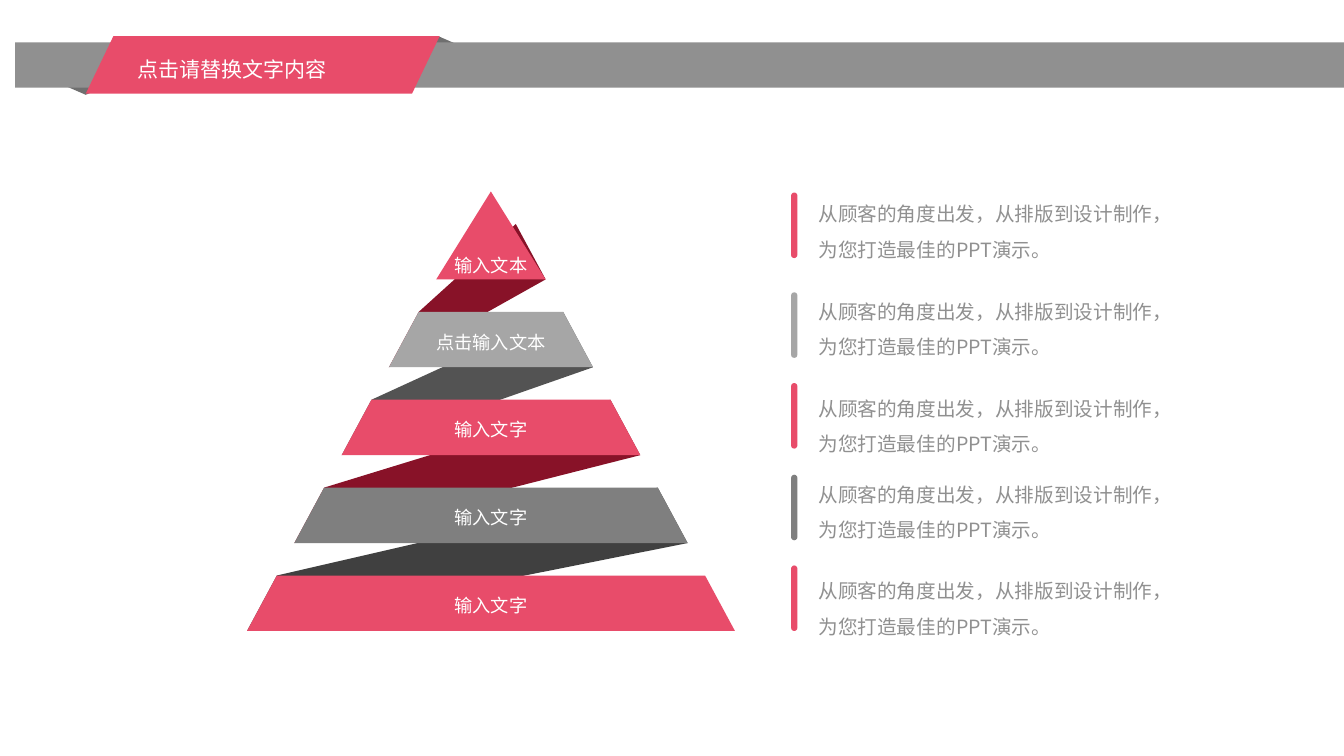
from lxml.etree import SubElement
from pptx import Presentation
from pptx.dml.color import RGBColor
from pptx.enum.shapes import MSO_SHAPE
from pptx.enum.text import MSO_ANCHOR, PP_ALIGN
from pptx.oxml.ns import qn
from pptx.util import Inches, Pt

WIDE, HIGH = Inches(13.33), Inches(7.5)
COL, ROW = WIDE / 100, HIGH / 100

PINK = RGBColor(0xE8, 0x4C, 0x6A)
WINE = RGBColor(0x88, 0x12, 0x28)
SILVER = RGBColor(0xA6, 0xA6, 0xA6)
GRAY = RGBColor(0x7F, 0x7F, 0x7F)
SLATE = RGBColor(0x53, 0x53, 0x53)
COAL = RGBColor(0x40, 0x40, 0x40)
STONE = RGBColor(0x90, 0x90, 0x90)
SHADE = RGBColor(0x6F, 0x6F, 0x6F)
WHITE = RGBColor(0xFF, 0xFF, 0xFF)

SANS = "Noto Sans CJK SC"
TITLE = "点击请替换文字内容"
NOTE = "从顾客的角度出发，从排版到设计制作，为您打造最佳的PPT演示。"
LEVELS = [
    ("输入文本", PINK),
    ("点击输入文本", SILVER),
    ("输入文字", PINK),
    ("输入文字", GRAY),
    ("输入文字", PINK),
]
FOLDS = [WINE, SLATE, WINE, COAL]
BARS = [0, 13.2, 25.2, 37.33, 49.33]
NOTES = [-0.94, 12, 24.8, 36.13, 48.93]


def place(x, y, w, h):
    return [round(n) for n in (x * COL, y * ROW, w * COL, h * ROW)]


def paint(shape, color):
    shape.shadow.inherit = False
    shape.fill.solid()
    shape.fill.fore_color.rgb = color
    shape.line.fill.background()
    return shape


def block(slide, kind, box, color):
    return paint(slide.shapes.add_shape(kind, *place(*box)), color)


def outline(slide, points, color):
    spots = [(round(x * COL), round(y * ROW)) for x, y in points]
    build = slide.shapes.build_freeform(*spots[0])
    build.add_line_segments(spots[1:], close=True)
    return paint(build.convert_to_shape(), color)


def write(slide, box, text, size, color, name, space):
    frame = slide.shapes.add_textbox(*place(*box)).text_frame
    frame.word_wrap = True
    para = frame.paragraphs[0]
    para.text = text
    para.line_spacing = space
    para.font.size = Pt(size)
    para.font.color.rgb = color
    para.font.name = name
    props = para._p.pPr.find(qn("a:defRPr"))
    SubElement(props, qn("a:ea")).set("typeface", SANS)
    return frame


def header(slide, x, y, w, h):
    block(slide, MSO_SHAPE.ISOSCELES_TRIANGLE, (x + 27, y, 9, 3.47), SHADE)
    under = block(slide, MSO_SHAPE.ISOSCELES_TRIANGLE, (x + 0.75, y + 4.27, 9, 3.47), SHADE)
    under.rotation = 180
    block(slide, MSO_SHAPE.RECTANGLE, (x, y + 0.8, w, 6), STONE)
    flag = block(slide, MSO_SHAPE.PARALLELOGRAM, (x + 5.25, y, 26.33, h), PINK)
    flag.adjustments[0] = 0.48
    write(slide, (x + 8.4, y + 0.4, 19.73, 6.4), TITLE, 15, WHITE, "Arial", 1.5)


def pyramid(slide, x, y, w, h):
    mid, pitch = x + w / 2, h / len(LEVELS)
    step, inset, depth = 3.52, 2.22, 7.33
    first = w / 2 - step * (len(LEVELS) - 1)
    halves = [first + step * i for i in range(len(LEVELS))]
    feet = [y + pitch * (i + 1) for i in range(len(LEVELS))]

    for i, color in enumerate(FOLDS):
        near, far = halves[i], halves[i + 1]
        outline(slide, [
            (mid + near - inset, feet[i] - depth),
            (mid - far + inset, feet[i + 1] - depth),
            (mid - far, feet[i + 1]),
            (mid + near, feet[i]),
        ], color)

    for i, (text, color) in enumerate(LEVELS):
        half, foot = halves[i], feet[i]
        top = half - inset
        crown = [(mid - top, foot - depth), (mid + top, foot - depth)] if i else [(mid, y)]
        outline(slide, crown + [(mid + half, foot), (mid - half, foot)], color)
        reach = top if i else half
        center = foot - (depth / 2 if i else 2.2)
        frame = write(slide, (mid - reach, center - 3, reach * 2, 6), text, 13, WHITE, "Arial", 1.2)
        frame.margin_left = frame.margin_right = frame.margin_top = frame.margin_bottom = 0
        frame.vertical_anchor = MSO_ANCHOR.MIDDLE
        frame.paragraphs[0].alignment = PP_ALIGN.CENTER


def legend(slide, x, y, w):
    for (_, color), drop, fall in zip(LEVELS, BARS, NOTES):
        bar = block(slide, MSO_SHAPE.ROUND_2_SAME_RECTANGLE, (x, y + drop, 0.47, 8.67), color)
        bar.adjustments[0] = bar.adjustments[1] = 0.5
        write(slide, (x + 1.3, y + fall, w - 1.3, 10.8), NOTE, 14, STONE, SANS, 1.5)


def main():
    deck = Presentation()
    deck.slide_width, deck.slide_height = WIDE, HIGH
    slide = deck.slides.add_slide(deck.slide_layouts[6])
    pyramid(slide, 18.38, 25.33, 36.3, 58.13)
    legend(slide, 58.86, 25.47, 28)
    header(slide, 1.13, 4.8, 98.87, 7.6)
    deck.save("out.pptx")


if __name__ == "__main__":
    main()
